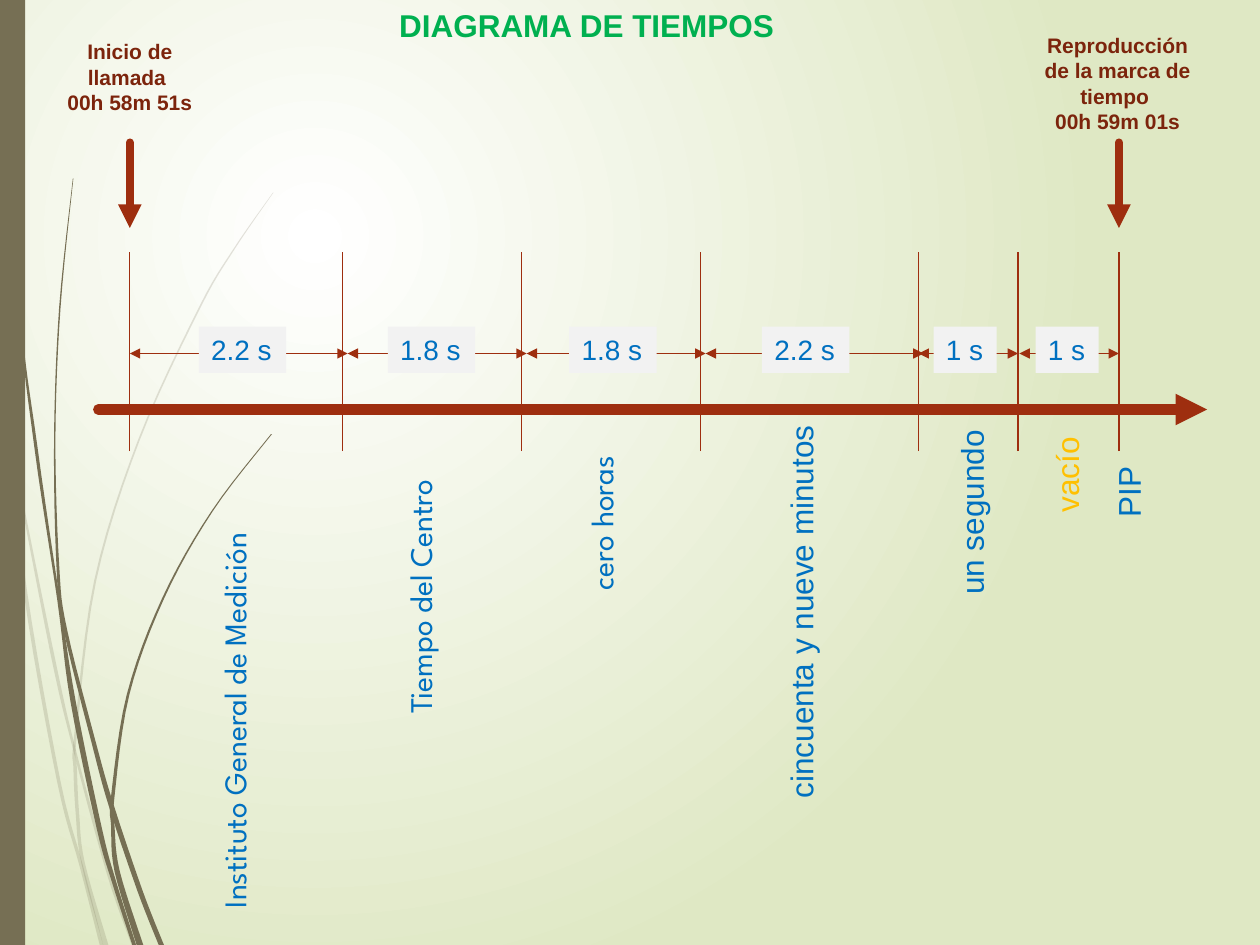
"""Build a timing diagram of a spoken time signal on a slide with grass blades."""
import pptx
import pptx.dml.color
import pptx.enum.shapes
import pptx.enum.text
import pptx.oxml.ns
import pptx.util
from lxml import etree

Pt = pptx.util.Pt
qn = pptx.oxml.ns.qn

HUE = {"white": "FFFFFF", "green": "DFE8C4", "olive": "766F54", "rust": "9E2E0F",
       "brown": "7C240C", "blue": "0070C0", "gold": "FFC000", "title": "00B050",
       "chip": "F2F2F2"}
SANS, ROUND = "Arial", "League Spartan"

TICKS = [74.2, 195.8, 298.1, 400.3, 524.9, 581.8, 639.4]
SPANS = [
    ("2.2 s", 74.2, 198.7, 138.6, 50),
    ("1.8 s", 198.7, 301, 246.6, 50),
    ("1.8 s", 301, 403.2, 350.3, 50),
    ("2.2 s", 403.2, 527.8, 460.4, 50),
    ("1 s", 524.9, 581.8, 551.5, 36),
    ("1 s", 582.5, 639.4, 609.8, 36),
]
WORDS = [
    ("Instituto General de Medición", 133.6, 380.2, 291.6, ROUND, "blue"),
    ("Tiempo del Centro", 239.8, 325.4, 178.6, ROUND, "blue"),
    ("cero horas", 343.4, 290.2, 108, ROUND, "blue"),
    ("cincuenta y nueve minutos", 457.6, 348.5, 229.7, SANS, "blue"),
    ("un segundo", 555.1, 292.3, 109.4, SANS, "blue"),
    ("vacío", 609.5, 270.7, 58.3, SANS, "gold"),
    ("PIP", 644.8, 280.8, 43.9, SANS, "blue"),
]
NOTES = [
    ("Inicio de llamada \n00h 58m 51s", 27.4, 18.7, 93.6, 51, TICKS[0]),
    ("Reproducción de la marca de tiempo \n00h 59m 01s", 586.8, 15.1, 103.7, 65.5, TICKS[-1]),
]
PALE = [
    [(209, 0, 1), (248, 5, 2), (263, 8, 1), (375, 30.2, 2), (428, 42.5, 1.5),
     (499, 62, 2), (540, 76.5, 2.5)],
    [(252, 5.8, 0.5), (338, 14.5, 2), (446, 33.5, 2), (495, 46.5, 2), (540, 58, 2)],
    [(110, 156.2, 0.3), (142, 134, 0.8), (176, 114, 1), (251, 79.6, 1), (332, 54.4, 1.2),
     (420, 43.2, 1.5), (439, 43, 2), (465, 44.3, 2), (493, 47.5, 2), (540, 60.5, 3)],
]
DARK = [
    [(0, 1.8, 0.7), (168, 10.4, 0.8), (256, 20.6, 1.8), (343, 33.5, 1.5), (401, 41.8, 3),
     (474, 56.9, 3), (504, 65.2, 2.5), (540, 76.7, 2.2)],
    [(102, 41.8, 0.3), (176, 34.2, 0.8), (251, 31.3, 0.8), (324, 33.1, 1.6),
     (360, 37.4, 2), (426, 54, 2.5), (461, 63.8, 3), (509, 80, 3), (540, 92.2, 3)],
    [(248, 155.2, 0.6), (292, 121.3, 0.8), (342, 93.2, 1.2), (397, 73.2, 1.5),
     (455, 64.5, 2), (472, 64.5, 2), (498, 67, 3), (540, 80, 3.8)],
]

deck = pptx.Presentation()
deck.slide_width, deck.slide_height = Pt(720), Pt(540)
slide = deck.slides.add_slide(deck.slide_layouts[6])
shapes = slide.shapes


def tint(name):
    return pptx.dml.color.RGBColor.from_string(HUE[name])


def paint(shape, name, alpha=None):
    shape.shadow.inherit = False
    shape.line.fill.background()
    shape.fill.solid()
    shape.fill.fore_color.rgb = tint(name)
    if alpha:
        rgb = shape._element.spPr.find(".//" + qn("a:srgbClr"))
        etree.SubElement(rgb, qn("a:alpha"), val=str(alpha * 1000))


def box(x, y, w, h):
    rect = pptx.enum.shapes.MSO_SHAPE.RECTANGLE
    return shapes.add_shape(rect, Pt(x), Pt(y), Pt(w), Pt(h))


def write(text, x, y, w, h, *, size=18, font=SANS, hue="blue", bold=False,
          fill=None, turn=0, wrap=False, mid=False):
    if fill:
        shape = box(x, y, w, h)
        paint(shape, fill)
    else:
        shape = shapes.add_textbox(Pt(x), Pt(y), Pt(w), Pt(h))
    shape.rotation = turn
    frame = shape.text_frame
    frame.word_wrap = wrap
    frame.text = text
    align = pptx.enum.text.PP_ALIGN
    for para in frame.paragraphs:
        para.alignment = align.CENTER if mid else align.LEFT
        face = para.runs[0].font
        face.name, face.size, face.bold = font, Pt(size), bold
        face.color.rgb = tint(hue)


def draw(x1, y1, x2, y2, width=0.75, tips=(), cap="flat"):
    kind = pptx.enum.shapes.MSO_CONNECTOR.STRAIGHT
    line = shapes.add_connector(kind, Pt(x1), Pt(y1), Pt(x2), Pt(y2))
    line.line.width = Pt(width)
    line.line.color.rgb = tint("rust")
    edge = line.line._get_or_add_ln()
    edge.set("cap", cap)
    for tip in tips:
        etree.SubElement(edge, qn(f"a:{tip}End"), type="triangle")
    etree.SubElement(line._element.spPr, qn("a:effectLst"))


def curve(knots, steps=6):
    ends = [knots[0], *knots, knots[-1]]
    out = []
    for a, b, c, d in zip(ends, ends[1:], ends[2:], ends[3:]):
        for t in (n / steps for n in range(steps)):
            out.append([q + t / 2 * (r - p + t * (2 * p - 5 * q + 4 * r - s
                        + t * (3 * (q - r) + s - p))) for p, q, r, s in zip(a, b, c, d)])
    return out + [knots[-1]]


def blade(knots, alpha=None):
    rows = curve(knots)
    left = [(Pt(x - w / 2), Pt(y)) for y, x, w in rows]
    right = [(Pt(x + w / 2), Pt(y)) for y, x, w in reversed(rows)]
    form = shapes.build_freeform(*left[0])
    form.add_line_segments(left[1:] + right)
    paint(form.convert_to_shape(), "olive", alpha)


def shade():
    fill = slide.background.fill
    fill.gradient()
    for stop, name, place in zip(fill.gradient_stops, ("white", "green"), (0, 1)):
        stop.color.rgb = tint(name)
        stop.position = place
    grad = slide._element.find(".//" + qn("a:gradFill"))
    grad.remove(grad.find(qn("a:lin")))
    glow = etree.SubElement(grad, qn("a:path"), path="circle")
    etree.SubElement(glow, qn("a:fillToRect"), l="50000", t="50000", r="100000", b="100000")


def main():
    shade()
    for knots in PALE:
        blade(knots, alpha=20)
    for knots in DARK:
        blade(knots)
    paint(box(0, 0, 14.4, 540), "olive")
    draw(56.2, 234, 689.8, 234, width=6, tips=["tail"], cap="rnd")
    for x in TICKS:
        draw(x, 257.8, x, 144)
    for text, start, end, mid, wide in SPANS:
        draw(start, 202, end, 202, tips=["head", "tail"])
        write(text, mid - wide / 2, 186.6, wide, 26.6, size=16, fill="chip")
    for text, x, y, long, font, hue in WORDS:
        write(text, x - long / 2, y - 14.4, long, 28.8, font=font, hue=hue, turn=270)
    for text, x, y, w, h, tick in NOTES:
        write(text, x, y, w, h, size=12, hue="brown", bold=True, wrap=True, mid=True)
        draw(tick, 81.4, tick, 130.3, width=4.5, tips=["tail"], cap="rnd")
    write("DIAGRAMA DE TIEMPOS", 221, 0, 231, 28.8, hue="title", bold=True)
    deck.save("out.pptx")


if __name__ == "__main__":
    main()
